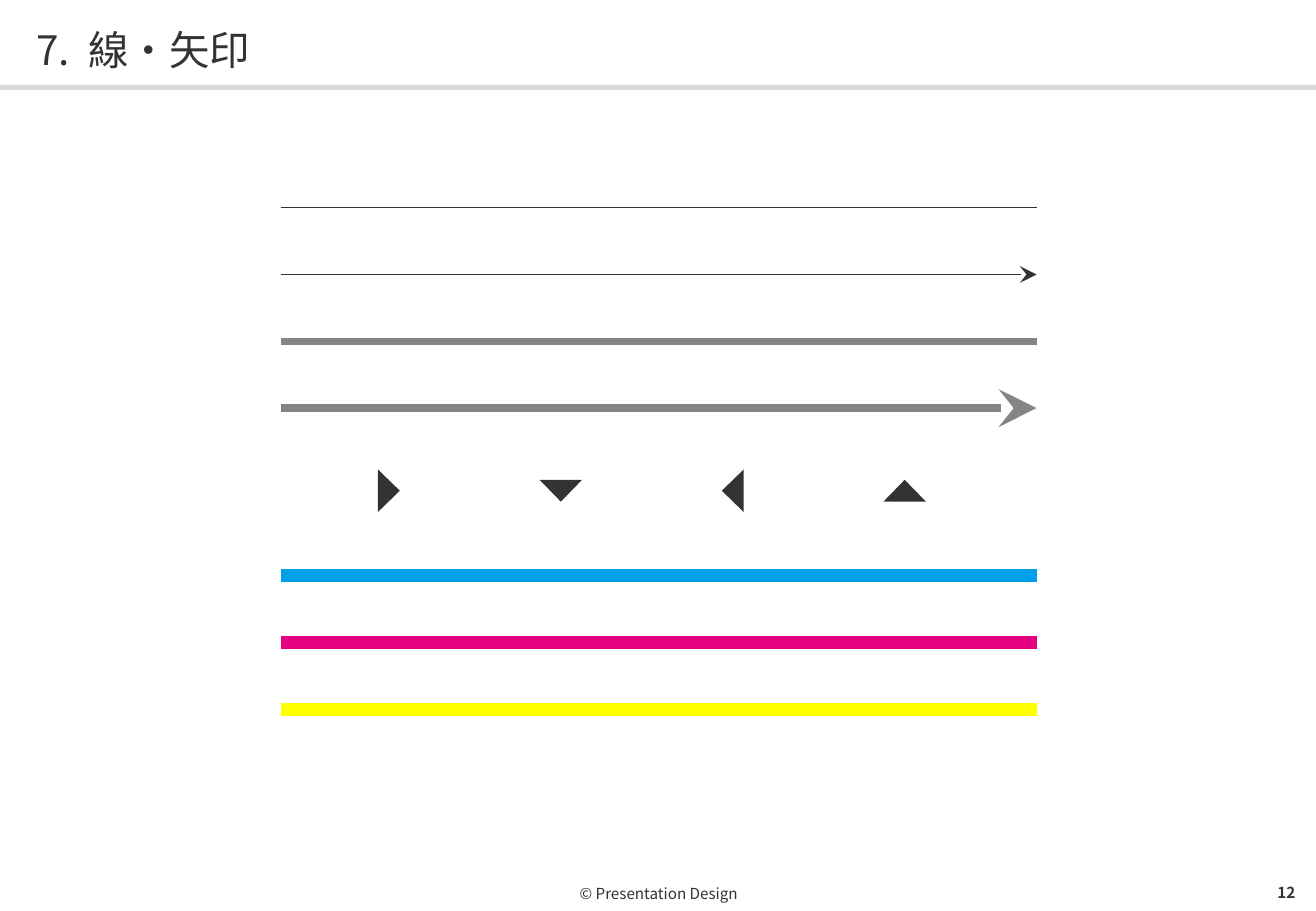
from dataclasses import dataclass

from lxml import etree
from pptx import Presentation
from pptx import util as u
from pptx.dml.color import RGBColor
from pptx.enum import shapes, text
from pptx.oxml.ns import qn

WIDTH, HEIGHT = 10.83, 7.5
FONT = "Noto Sans CJK JP"
DARK, GREY, PALE = "333333", "858585", "D9D9D9"
LINE_LEFT, LINE_RIGHT = 2.31, 8.53
PLAIN_TOP, COLOUR_TOP, ROW = 1.71, 4.74, 0.55
TRIANGLE_X, TRIANGLE_Y, COLUMN = 3.2, 4.04, 1.415
TRIANGLE_W, TRIANGLE_H = 0.35, 0.18


@dataclass(frozen=True)
class Rule:
    top: float
    row: int
    color: str
    weight: float
    arrow: bool = False


@dataclass(frozen=True)
class Piece:
    text: str
    spacing: int = 0


@dataclass(frozen=True)
class Label:
    left: float
    top: float
    width: float
    height: float
    pieces: tuple[Piece, ...]
    size: float
    align: text.PP_ALIGN
    bold: bool = False
    line_spacing: float = 1.0


RULES = (
    Rule(PLAIN_TOP, 0, DARK, 0.5),
    Rule(PLAIN_TOP, 1, DARK, 0.5, True),
    Rule(PLAIN_TOP, 2, GREY, 4.5),
    Rule(PLAIN_TOP, 3, GREY, 4.5, True),
    Rule(COLOUR_TOP, 0, "00A0E9", 8),
    Rule(COLOUR_TOP, 1, "E4007F", 8),
    Rule(COLOUR_TOP, 2, "FFFF00", 8),
)
TRIANGLE_TURNS = (90, 180, 270, 0)
LABELS = (
    Label(0.3, 0.17, 10.24, 0.43,
          (Piece("7."), Piece(" ", 540), Piece("線・矢印")),
          24, text.PP_ALIGN.LEFT, line_spacing=1.1),
    Label(0.89, 7.21, 9.06, 0.29, (Piece("© Presentation Design"),),
          9, text.PP_ALIGN.CENTER),
    Label(10.14, 7.21, 0.52, 0.28, (Piece("12"),),
          9, text.PP_ALIGN.RIGHT, bold=True),
)


def rgb(color: str) -> RGBColor:
    return RGBColor.from_string(color)


def draw_shape(s, kind, left: float, top: float, width: float, height: float,
               color: str, turn: float = 0) -> None:
    sp = s.shapes.add_shape(kind, *map(u.Inches, (left, top, width, height)))
    sp.shadow.inherit = False
    sp.fill.solid()
    sp.fill.fore_color.rgb = rgb(color)
    sp.line.fill.background()
    sp.rotation = turn


def draw_rule(s, rule: Rule) -> None:
    y = u.Inches(rule.top + rule.row * ROW)
    cx = s.shapes.add_connector(shapes.MSO_CONNECTOR.STRAIGHT,
                                u.Inches(LINE_LEFT), y, u.Inches(LINE_RIGHT), y)
    cx.line.color.rgb = rgb(rule.color)
    cx.line.width = u.Pt(rule.weight)
    if rule.arrow:
        etree.SubElement(cx.line._get_or_add_ln(), qn("a:tailEnd"),
                         type="stealth", w="lg", len="lg")
    etree.SubElement(cx._element.spPr, qn("a:effectLst"))


def draw_label(s, label: Label) -> None:
    sp = s.shapes.add_textbox(*map(u.Inches, (label.left, label.top,
                                              label.width, label.height)))
    tf = sp.text_frame
    tf.word_wrap = True
    tf.vertical_anchor = text.MSO_ANCHOR.MIDDLE
    tf.margin_left = tf.margin_right = tf.margin_top = tf.margin_bottom = 0
    p = tf.paragraphs[0]
    p.alignment = label.align
    p.line_spacing = label.line_spacing
    for piece in label.pieces:
        r = p.add_run()
        r.text = piece.text
        r.font.size = u.Pt(label.size)
        r.font.bold = label.bold
        r.font.name = FONT
        r.font.color.rgb = rgb(DARK)
        props = r._r.get_or_add_rPr()
        etree.SubElement(props, qn("a:ea"), typeface=FONT)
        if piece.spacing:
            props.set("spc", str(piece.spacing))


def main() -> None:
    prs = Presentation()
    prs.slide_width, prs.slide_height = u.Inches(WIDTH), u.Inches(HEIGHT)
    s = prs.slides.add_slide(prs.slide_layouts[6])
    draw_shape(s, shapes.MSO_SHAPE.RECTANGLE, 0, 0.7, WIDTH, 0.04, PALE)
    for label in LABELS:
        draw_label(s, label)
    for rule in RULES:
        draw_rule(s, rule)
    for column, turn in enumerate(TRIANGLE_TURNS):
        draw_shape(s, shapes.MSO_SHAPE.ISOSCELES_TRIANGLE,
                   TRIANGLE_X + column * COLUMN - TRIANGLE_W / 2,
                   TRIANGLE_Y - TRIANGLE_H / 2,
                   TRIANGLE_W, TRIANGLE_H, DARK, turn)
    prs.save("out.pptx")


if __name__ == "__main__":
    main()
